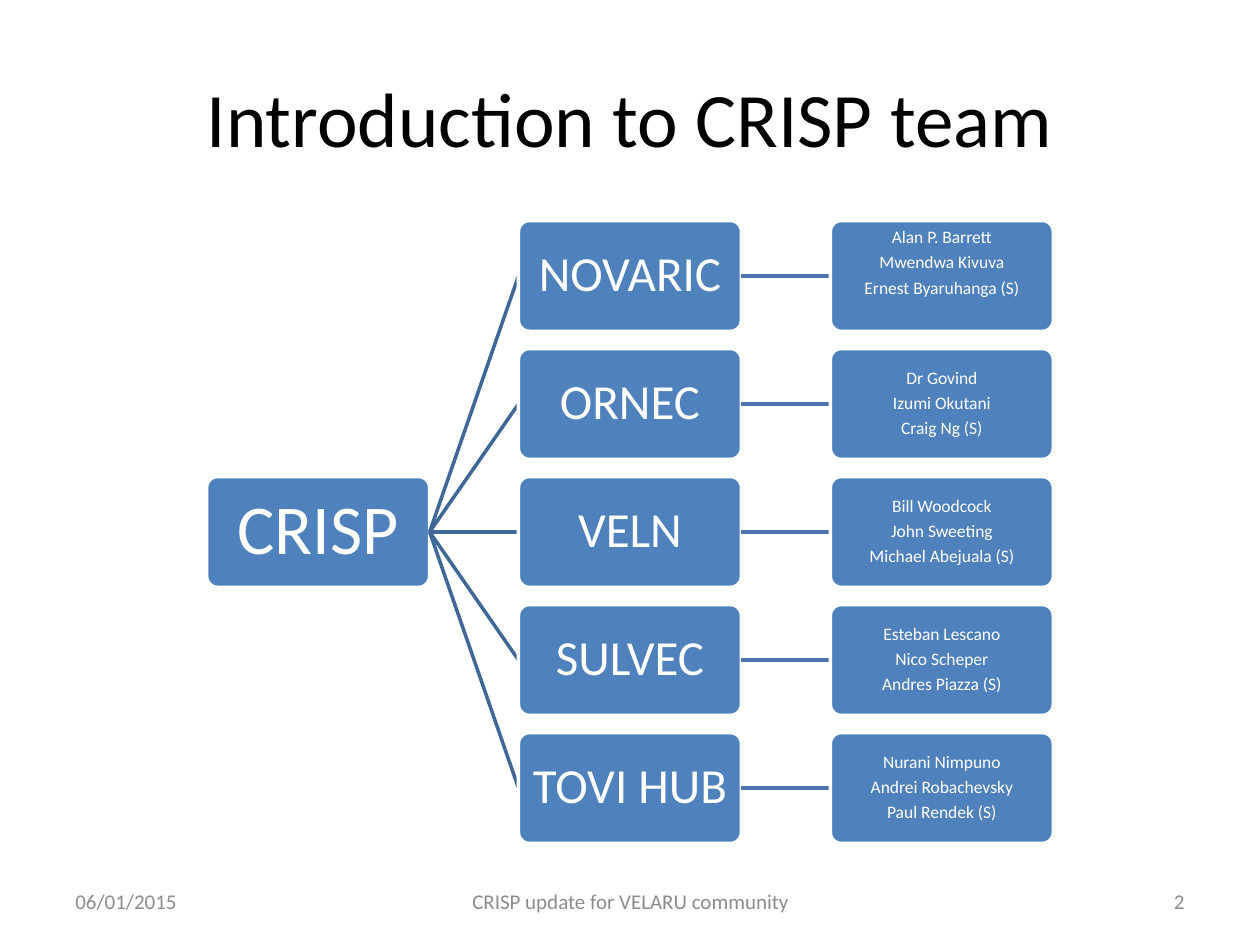
from dataclasses import dataclass

from lxml.etree import SubElement
from pptx import Presentation
from pptx.dml.color import RGBColor
from pptx.enum.shapes import MSO_CONNECTOR, MSO_SHAPE
from pptx.enum.text import MSO_ANCHOR, PP_ALIGN
from pptx.oxml.ns import qn
from pptx.util import Inches, Pt

LEFT, TOP = 1.64, 1.75
COL_STEP, ROW_STEP = 2.475, 1.016
BOX_W, BOX_H = 1.77, 0.88
BLUE, WHITE, BLACK, GREY = "4F81BD", "FFFFFF", "000000", "8C8C8C"
ROOT_LINK, MEMBER_LINK = "3F6797", "4875AC"


@dataclass
class Node:
    col: int
    row: int
    lines: list[str]
    size: float
    inset: float
    lift: float = 0


@dataclass
class Registry:
    name: str
    members: list[str]
    lift: float = 0


@dataclass
class Label:
    text: str
    left: float
    top: float
    width: float
    height: float
    size: float
    color: str
    align: PP_ALIGN


REGISTRIES = [
    Registry("NOVARIC", ["Alan P. Barrett", "Mwendwa Kivuva", "Ernest Byaruhanga (S)"], 0.2),
    Registry("ORNEC", ["Dr Govind", "Izumi Okutani", "Craig Ng (S)"]),
    Registry("VELN", ["Bill Woodcock", "John Sweeting", "Michael Abejuala (S)"]),
    Registry("SULVEC", ["Esteban Lescano", "Nico Scheper", "Andres Piazza (S)"]),
    Registry("TOVI HUB", ["Nurani Nimpuno", "Andrei Robachevsky", "Paul Rendek (S)"]),
]

LABELS = [
    Label("Introduction to CRISP team", 0.5, 0.3, 9, 1.25, 44, BLACK, PP_ALIGN.CENTER),
    Label("06/01/2015", 0.5, 6.95, 2.33, 0.4, 12, GREY, PP_ALIGN.LEFT),
    Label("CRISP update for VELARU community", 3.42, 6.95, 3.17, 0.4, 12, GREY, PP_ALIGN.CENTER),
    Label("2", 7.17, 6.95, 2.33, 0.4, 12, GREY, PP_ALIGN.RIGHT),
]


def rgb(value: str) -> RGBColor:
    return RGBColor.from_string(value)


def write(tf, lines: list[str], *, size: float, color: str, align=PP_ALIGN.CENTER,
          spacing: float = 1, after: float = 0) -> None:
    tf.word_wrap = True
    tf.vertical_anchor = MSO_ANCHOR.MIDDLE
    for i, line in enumerate(lines):
        p = tf.add_paragraph() if i else tf.paragraphs[0]
        p.alignment = align
        p.line_spacing = spacing
        p.space_after = Pt(after)
        r = p.add_run()
        r.text = line
        r.font.name = "Calibri"
        r.font.size = Pt(size)
        r.font.color.rgb = rgb(color)


def add_label(s, label: Label) -> None:
    box = (label.left, label.top, label.width, label.height)
    sp = s.shapes.add_textbox(*map(Inches, box))
    write(sp.text_frame, [label.text], size=label.size, color=label.color, align=label.align)


def add_node(s, node: Node):
    left, top = LEFT + node.col * COL_STEP, TOP + node.row * ROW_STEP
    sp = s.shapes.add_shape(MSO_SHAPE.ROUNDED_RECTANGLE,
                            *map(Inches, (left, top, BOX_W, BOX_H)))
    sp.adjustments[0] = 0.1
    sp.shadow.inherit = False
    sp.fill.solid()
    sp.fill.fore_color.rgb = rgb(BLUE)
    sp.line.color.rgb = rgb(WHITE)
    sp.line.width = Pt(2)
    tf = sp.text_frame
    tf.margin_left = tf.margin_right = tf.margin_top = Inches(node.inset)
    tf.margin_bottom = Inches(node.inset + node.lift)
    write(tf, node.lines, size=node.size, color=WHITE, spacing=0.9, after=0.35 * node.size)
    return sp


def add_child(s, parent, node: Node, color: str):
    link = s.shapes.add_connector(MSO_CONNECTOR.STRAIGHT, 0, 0, 0, 0)
    link.line.color.rgb = rgb(color)
    link.line.width = Pt(2)
    SubElement(link._element.spPr, qn("a:effectLst"))
    sp = add_node(s, node)
    link.begin_connect(parent, 3)
    link.end_connect(sp, 1)
    return sp


def main() -> None:
    prs = Presentation()
    prs.slide_width, prs.slide_height = Inches(10), Inches(7.5)
    s = prs.slides.add_slide(prs.slide_layouts[6])
    root = add_node(s, Node(0, len(REGISTRIES) // 2, ["CRISP"], 40, 0.03))
    for row, reg in enumerate(REGISTRIES):
        sp = add_child(s, root, Node(1, row, [reg.name], 28, 0.02), ROOT_LINK)
        add_child(s, sp, Node(2, row, reg.members, 10, 0.01, reg.lift), MEMBER_LINK)
    for label in LABELS:
        add_label(s, label)
    prs.save("out.pptx")


if __name__ == "__main__":
    main()
